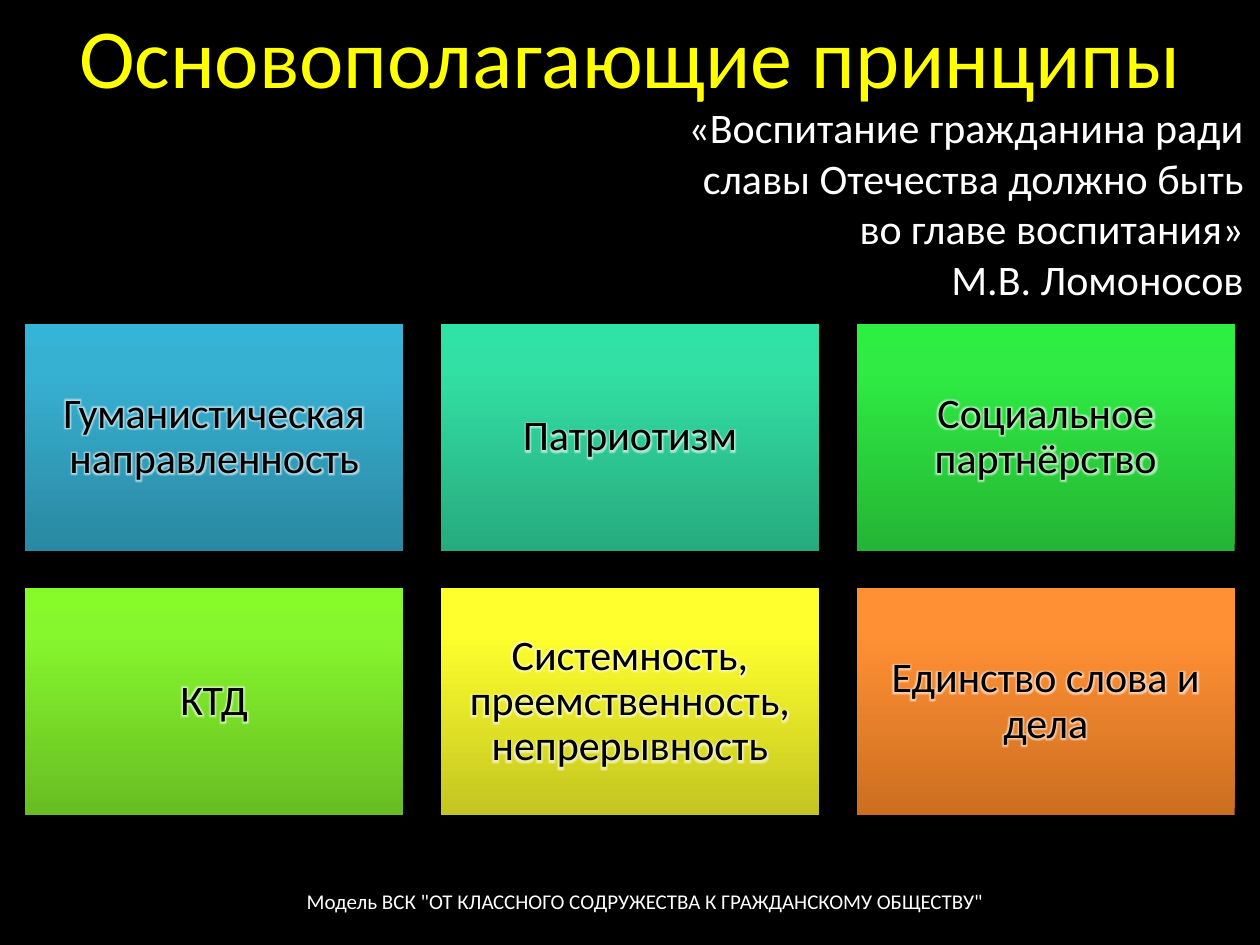
from dataclasses import dataclass

import lxml.etree
import pptx
import pptx.dml.color
import pptx.enum.shapes
import pptx.enum.text
import pptx.oxml
import pptx.oxml.ns
import pptx.util

Inches = pptx.util.Inches
Pt = pptx.util.Pt
ALIGN = pptx.enum.text.PP_ALIGN
ANCHOR = pptx.enum.text.MSO_ANCHOR

FONT = "Calibri"
COLORS = {"background": "000000", "title": "FFFF00", "light": "FFFFFF", "dark": "000000"}
GRADIENT_STOPS = (0, 80, 100)

# Card grid
COLUMNS = 3
CARD_W, CARD_H, GAP = 3, 1.8, 0.3
GRID_LEFT, GRID_TOP = 0.2, 2.57


@dataclass
class Label:
    lines: list[str]
    box: tuple[float, float, float, float]
    size: int
    color: str
    align: ALIGN
    anchor: ANCHOR = ANCHOR.MIDDLE


@dataclass
class Card:
    text: str
    gradient: tuple[str, str, str]  # from bottom to top


LABELS = [
    Label(["Основополагающие принципы"], (0.5, -0.19, 9, 1.25), 48, "title", ALIGN.CENTER),
    Label(['Модель ВСК "ОТ КЛАССНОГО СОДРУЖЕСТВА К ГРАЖДАНСКОМУ ОБЩЕСТВУ"'],
          (1.38, 6.95, 7.48, 0.4), 12, "light", ALIGN.CENTER),
    Label(["«Воспитание гражданина ради славы Отечества должно быть во главе воспитания»",
           "М.В. Ломоносов"],
          (5.21, 0.76, 4.76, 1.72), 24, "light", ALIGN.RIGHT, ANCHOR.TOP),
]

CARDS = [
    Card("Гуманистическая направленность", ("2A88A2", "37B1D2", "34B4D6")),
    Card("Патриотизм", ("27AB7E", "32DFA4", "2FE3A6")),
    Card("Социальное партнёрство", ("24B534", "2FEB43", "2CEF41")),
    Card("КТД", ("67BD22", "86F62D", "86FB29")),
    Card("Системность, преемственность, непрерывность", ("C4C521", "FEFF2C", "FEFF2D")),
    Card("Единство слова и дела", ("CC6E20", "FF9034", "FF9136")),
]


def rgb(name: str) -> pptx.dml.color.RGBColor:
    return pptx.dml.color.RGBColor.from_string(COLORS[name])


def write(tf, lines: list[str], size: int, color: str, align: ALIGN, anchor: ANCHOR) -> None:
    tf.word_wrap = True
    tf.vertical_anchor = anchor
    for i, line in enumerate(lines):
        p = tf.paragraphs[0] if i == 0 else tf.add_paragraph()
        p.add_run().text = line
        p.alignment = align
        p.font.name = FONT
        p.font.size = Pt(size)
        p.font.color.rgb = rgb(color)


def set_gradient(sp, colors: tuple[str, str, str]) -> None:
    sp.fill.gradient()
    sp.fill.gradient_angle = 90
    stops = sp._element.spPr.find(".//" + pptx.oxml.ns.qn("a:gsLst"))
    for stop in list(stops):
        stops.remove(stop)
    for position, color in zip(GRADIENT_STOPS, colors):
        gs = lxml.etree.SubElement(stops, pptx.oxml.ns.qn("a:gs"), pos=str(position * 1000))
        lxml.etree.SubElement(gs, pptx.oxml.ns.qn("a:srgbClr"), val=color)


def add_glow(r) -> None:
    r._r.get_or_add_rPr().append(pptx.oxml.parse_xml(
        f'<a:effectLst {pptx.oxml.ns.nsdecls("a")}><a:glow rad="{Pt(5)}">'
        f'<a:srgbClr val="{COLORS["light"]}"><a:alpha val="60000"/></a:srgbClr>'
        '</a:glow></a:effectLst>'))


def add_label(s, label: Label) -> None:
    sp = s.shapes.add_textbox(*map(Inches, label.box))
    write(sp.text_frame, label.lines, label.size, label.color, label.align, label.anchor)


def add_card(s, index: int, card: Card) -> None:
    row, column = divmod(index, COLUMNS)
    sp = s.shapes.add_shape(
        pptx.enum.shapes.MSO_SHAPE.RECTANGLE,
        Inches(GRID_LEFT + column * (CARD_W + GAP)), Inches(GRID_TOP + row * (CARD_H + GAP)),
        Inches(CARD_W), Inches(CARD_H))
    sp.shadow.inherit = False
    sp.line.fill.background()
    set_gradient(sp, card.gradient)
    tf = sp.text_frame
    tf.margin_left = tf.margin_right = tf.margin_top = tf.margin_bottom = Inches(0.1)
    write(tf, [card.text], 24, "dark", ALIGN.CENTER, ANCHOR.MIDDLE)
    p = tf.paragraphs[0]
    p.line_spacing = 0.9
    add_glow(p.runs[0])


def main() -> None:
    prs = pptx.Presentation()
    prs.slide_width, prs.slide_height = Inches(10), Inches(7.5)
    s = prs.slides.add_slide(prs.slide_layouts[6])
    s.background.fill.solid()
    s.background.fill.fore_color.rgb = rgb("background")

    # Title, footer and quotation
    for label in LABELS:
        add_label(s, label)

    # Principles
    for i, card in enumerate(CARDS):
        add_card(s, i, card)

    prs.save("out.pptx")


if __name__ == "__main__":
    main()
